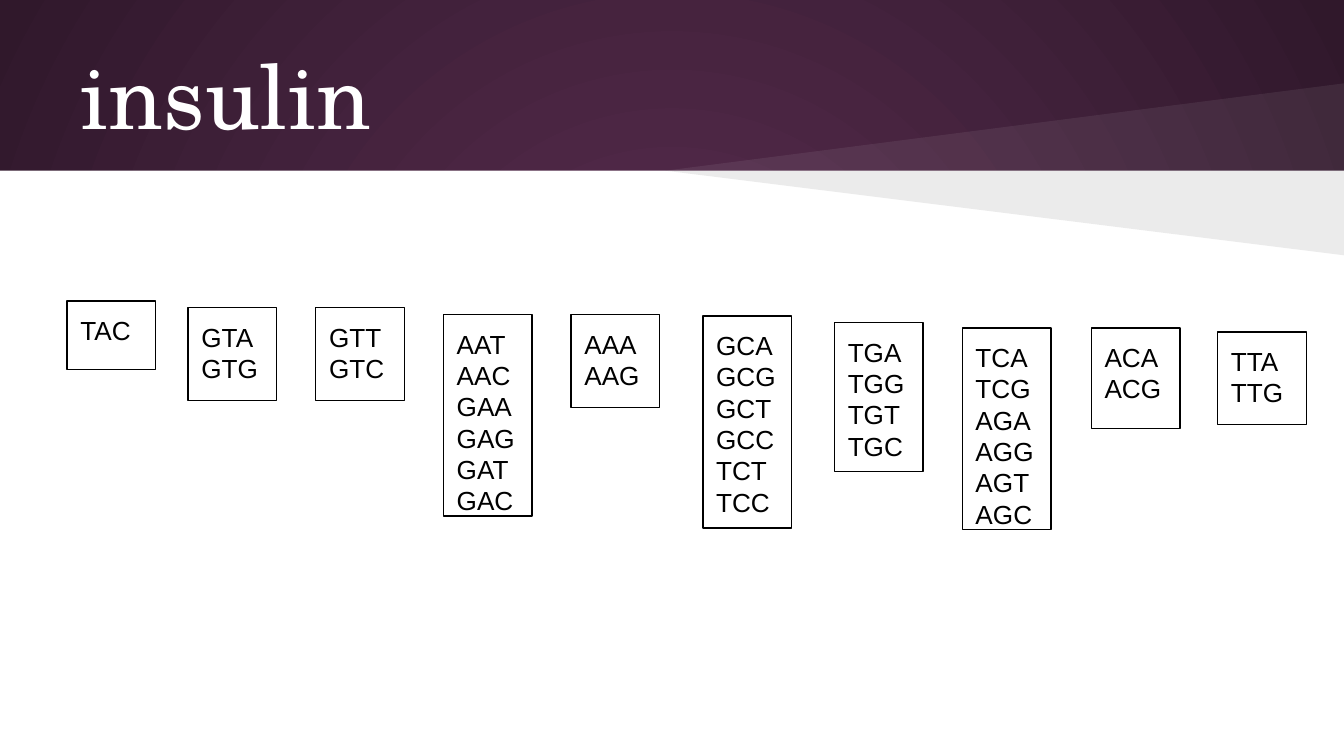
from dataclasses import dataclass

from lxml import etree
from pptx import Presentation
from pptx.dml.color import RGBColor
from pptx.enum import shapes, text
from pptx.oxml import ns
from pptx.util import Inches, Pt


@dataclass(frozen=True)
class Theme:
    glow: RGBColor = RGBColor(0x59, 0x2D, 0x50)
    edge: RGBColor = RGBColor(0x30, 0x18, 0x2B)
    white: RGBColor = RGBColor(255, 255, 255)
    black: RGBColor = RGBColor(0, 0, 0)
    title_font: str = "TeX Gyre Schola"
    codon_font: str = "Arial"
    title_size: int = 48
    codon_size: int = 14
    border: float = 0.75


@dataclass(frozen=True)
class CodonBox:
    left: float
    top: float
    height: float
    paragraphs: tuple[str, ...]


@dataclass(frozen=True)
class Beam:
    far_y: float
    color: RGBColor
    opacity: int


THEME = Theme()
WIDTH = 10
HEIGHT = WIDTH * 9 / 16
BAND_BOTTOM = 1.27
BEAM_TIP = 4.95
BOX_WIDTH = 0.66
INSET = 0.1

BEAMS = (Beam(0.62, THEME.white, 7), Beam(1.9, THEME.black, 8))

CODONS = (
    CodonBox(1.4, 2.29, 0.69, ("GTA", "GTG")),
    CodonBox(2.35, 2.29, 0.69, ("GTT GTC",)),
    CodonBox(4.25, 2.34, 0.69, ("AAA AAG",)),
    CodonBox(5.23, 2.35, 1.58, ("GCA GCG GCT GCC TCT TCC",)),
    CodonBox(6.21, 2.4, 1.11, ("TGA TGG TGT TGC",)),
    CodonBox(7.16, 2.44, 1.5, ("TCA TCG", "AGA AGG AGT AGC")),
    CodonBox(8.12, 2.44, 0.75, ("ACA ACG",)),
    CodonBox(9.06, 2.47, 0.69, ("TTA TTG",)),
    CodonBox(0.5, 2.24, 0.51, ("TAC",)),
    CodonBox(3.3, 2.34, 1.5, ("AAT AAC GAA GAG", "GAT", "GAC")),
)


def paint_background(slide) -> None:
    fill = slide.background.fill
    fill.gradient()
    for stop, color, position in zip(fill.gradient_stops, (THEME.glow, THEME.edge), (0, 1)):
        stop.color.rgb = color
        stop.position = position
    gradient = slide.element.find(".//" + ns.qn("a:gradFill"))
    linear = gradient.find(ns.qn("a:lin"))
    radial = etree.Element(ns.qn("a:path"), {"path": "circle"})
    etree.SubElement(radial, ns.qn("a:fillToRect"), dict.fromkeys("ltrb", "50000"))
    gradient.replace(linear, radial)


def fill_plain(shape, color: RGBColor) -> None:
    shape.shadow.inherit = False
    shape.fill.solid()
    shape.fill.fore_color.rgb = color
    shape.line.fill.background()


def draw_beam(slide, beam: Beam) -> None:
    builder = slide.shapes.build_freeform(Inches(WIDTH), Inches(BAND_BOTTOM))
    corners = ((BEAM_TIP, BAND_BOTTOM), (WIDTH, beam.far_y))
    builder.add_line_segments([(Inches(x), Inches(y)) for x, y in corners], close=True)
    ray = builder.convert_to_shape()
    fill_plain(ray, beam.color)
    color = ray.element.spPr.find(".//" + ns.qn("a:srgbClr"))
    etree.SubElement(color, ns.qn("a:alpha"), val=str(beam.opacity * 1000))


def set_frame(frame, anchor: text.MSO_ANCHOR) -> None:
    frame.word_wrap = True
    frame.auto_size = text.MSO_AUTO_SIZE.NONE
    frame.vertical_anchor = anchor
    frame.margin_left = frame.margin_right = Inches(INSET)
    frame.margin_top = frame.margin_bottom = Inches(INSET)


def add_run(paragraph, words: str, font: str, size: int, color: RGBColor) -> None:
    paragraph.alignment = text.PP_ALIGN.LEFT
    run = paragraph.add_run()
    run.text = words
    run.font.name = font
    run.font.size = Pt(size)
    run.font.color.rgb = color


def place_title(slide, words: str) -> None:
    title = slide.shapes.title
    title.left, title.top = Inches(0.5), Inches(0.23)
    title.width, title.height = Inches(9), Inches(0.94)
    set_frame(title.text_frame, text.MSO_ANCHOR.MIDDLE)
    add_run(title.text_frame.paragraphs[0], words, THEME.title_font, THEME.title_size, THEME.white)
    title.element.getparent().append(title.element)


def draw_codons(slide, codons: CodonBox) -> None:
    box = slide.shapes.add_shape(
        shapes.MSO_SHAPE.RECTANGLE,
        Inches(codons.left), Inches(codons.top), Inches(BOX_WIDTH), Inches(codons.height),
    )
    box.shadow.inherit = False
    box.fill.background()
    box.line.color.rgb = THEME.black
    box.line.width = Pt(THEME.border)
    frame = box.text_frame
    set_frame(frame, text.MSO_ANCHOR.TOP)
    for index, triplets in enumerate(codons.paragraphs):
        paragraph = frame.add_paragraph() if index else frame.paragraphs[0]
        for line, triplet in enumerate(triplets.split()):
            if line:
                paragraph.add_line_break()
            add_run(paragraph, triplet, THEME.codon_font, THEME.codon_size, THEME.black)


def main() -> None:
    deck = Presentation()
    deck.slide_width, deck.slide_height = Inches(WIDTH), Inches(HEIGHT)
    slide = deck.slides.add_slide(deck.slide_layouts.get_by_name("Title Only"))
    paint_background(slide)
    page = slide.shapes.add_shape(
        shapes.MSO_SHAPE.RECTANGLE,
        0, Inches(BAND_BOTTOM), Inches(WIDTH), Inches(HEIGHT - BAND_BOTTOM),
    )
    fill_plain(page, THEME.white)
    for beam in BEAMS:
        draw_beam(slide, beam)
    place_title(slide, "insulin")
    for codons in CODONS:
        draw_codons(slide, codons)
    deck.save("out.pptx")


if __name__ == "__main__":
    main()
